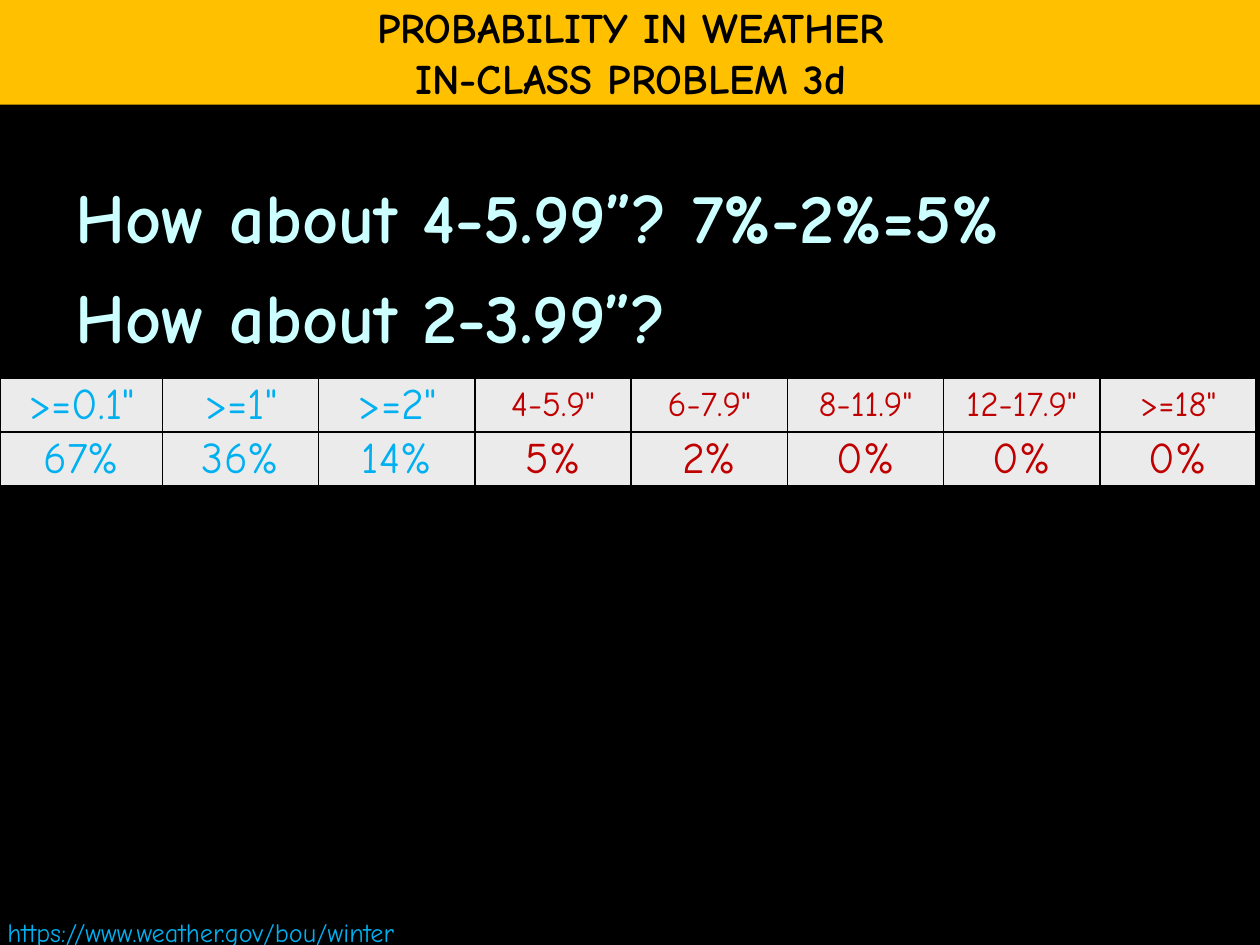
from lxml.etree import SubElement
from pptx import Presentation
from pptx.dml.color import RGBColor
from pptx.enum.text import MSO_ANCHOR, MSO_AUTO_SIZE, PP_ALIGN
from pptx.oxml.ns import qn
from pptx.util import Inches, Pt

FONT = "Comic Neue"
COLORS = {
    "black": "000000",
    "banner": "FFC000",
    "question": "CCFFFF",
    "blue": "00B0F0",
    "red": "C00000",
    "cell": "EBEBEB",
}


def format_text(paragraph, size, color, bold=False):
    font = paragraph.font
    font.name, font.size, font.bold = FONT, Pt(size), bold
    font.color.rgb = RGBColor.from_string(COLORS[color])


def add_borders(cell, color):
    properties = cell._tc.get_or_add_tcPr()
    for side in ("a:lnL", "a:lnR", "a:lnT", "a:lnB"):
        line = SubElement(properties, qn(side), w=str(Pt(1)))
        SubElement(SubElement(line, qn("a:solidFill")), qn("a:srgbClr"), val=COLORS[color])


prs = Presentation()
prs.slide_width, prs.slide_height = Inches(10), Inches(7.5)
slide = prs.slides.add_slide(prs.slide_layouts[1])
slide.background.fill.solid()
slide.background.fill.fore_color.rgb = RGBColor.from_string(COLORS["black"])

# Title banner
banner = slide.shapes.title
banner.left, banner.top = Inches(0), Inches(0)
banner.width, banner.height = Inches(10.01), Inches(0.83)
banner.fill.solid()
banner.fill.fore_color.rgb = RGBColor.from_string(COLORS["banner"])
heading = banner.text_frame
heading.text = "PROBABILITY IN WEATHER\nIN-CLASS PROBLEM 3d"
heading.auto_size = MSO_AUTO_SIZE.NONE
heading.word_wrap = False
heading.vertical_anchor = MSO_ANCHOR.MIDDLE
for paragraph in heading.paragraphs:
    paragraph.alignment = PP_ALIGN.CENTER
    format_text(paragraph, 24, "black", bold=True)

# Questions
questions = slide.placeholders[1]
questions.left, questions.top = Inches(0.5), Inches(1.33)
questions.width, questions.height = Inches(9.5), Inches(6.17)
questions.text_frame.text = "How about 4-5.99”? 7%-2%=5%\nHow about 2-3.99”?"
questions.text_frame.auto_size = MSO_AUTO_SIZE.NONE
for paragraph in questions.text_frame.paragraphs:
    paragraph.space_before = Pt(9)
    format_text(paragraph, 40, "question", bold=True)
    properties = paragraph._p.get_or_add_pPr()
    properties.set("marL", "0")
    properties.set("indent", "0")
    bullet = SubElement(properties, qn("a:buNone"))
    properties.find(qn("a:defRPr")).addprevious(bullet)

# Source address
source = slide.shapes.add_textbox(Inches(-0.04), Inches(7.22), Inches(5.01), Inches(0.35))
source.text_frame.word_wrap = True
source.text_frame.text = "https://www.weather.gov/bou/winter"
format_text(source.text_frame.paragraphs[0], 15, "blue")

# Snowfall probabilities: the first three columns are cumulative
CUMULATIVE = 3
snowfall = [
    ('>=0.1"', "67%"),
    ('>=1"', "36%"),
    ('>=2"', "14%"),
    ('4-5.9"', "5%"),
    ('6-7.9"', "2%"),
    ('8-11.9"', "0%"),
    ('12-17.9"', "0%"),
    ('>=18"', "0%"),
]
table = slide.shapes.add_table(
    2, len(snowfall), Inches(0), Inches(3), Inches(10), Inches(0.85)
).table
for col, entries in enumerate(snowfall):
    table.columns[col].width = Inches(1.29 if col == 0 else 1.24)
    color = "blue" if col < CUMULATIVE else "red"
    for row, entry in enumerate(entries):
        cell = table.cell(row, col)
        cell.text = entry
        cell.vertical_anchor = MSO_ANCHOR.MIDDLE
        cell.margin_left = cell.margin_right = cell.margin_top = Inches(0.01)
        cell.margin_bottom = 0
        add_borders(cell, "black")
        cell.fill.solid()
        cell.fill.fore_color.rgb = RGBColor.from_string(COLORS["cell"])
        paragraph = cell.text_frame.paragraphs[0]
        paragraph.alignment = PP_ALIGN.CENTER
        is_range = row == 0 and col >= CUMULATIVE
        format_text(paragraph, 20 if is_range else 25, color)

prs.save("out.pptx")
